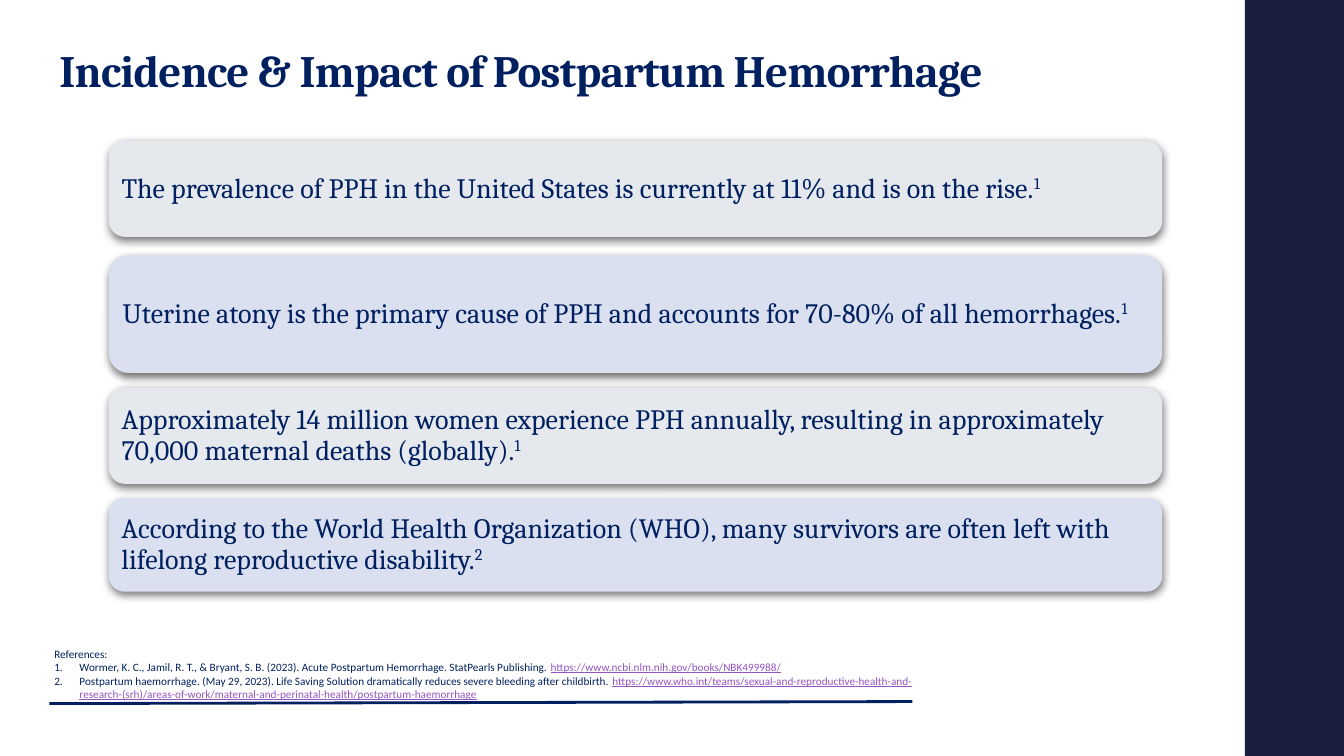
from dataclasses import dataclass
from itertools import cycle
from lxml import etree
from pptx import Presentation, util as u
from pptx.dml.color import RGBColor
from pptx.enum import shapes, text
from pptx.oxml.ns import qn

CELL = u.Inches(0.1)
COLUMNS, ROWS = 133.33, 75


@dataclass(frozen=True)
class Theme:
    """Colours, fonts and type sizes of the slide."""
    navy: str = "002060"
    band: str = "1B1E3E"
    link: str = "9454C3"
    cards: tuple = ("E5E9EE", "DAE0EF")
    serif: str = "Cambria"
    sans: str = "Calibri"
    title: int = 32
    body: int = 20
    note: int = 8


THEME = Theme()
TITLE = "Incidence & Impact of Postpartum Hemorrhage"
CARDS = [
    (0, 9.5, "The prevalence of PPH in the United States is currently at 11% and is on the rise.", "1"),
    (11.3, 11.7, "Uterine atony is the primary cause of PPH and accounts for 70-80% of all hemorrhages.", "1"),
    (24.5, 9.5, "Approximately 14 million women experience PPH annually, resulting in approximately "
     "70,000 maternal deaths (globally).", "1"),
    (35.4, 9.3, "According to the World Health Organization (WHO), many survivors are often left with "
     "lifelong reproductive disability.", "2"),
]
REFERENCES = [
    ("Wormer, K. C., Jamil, R. T., & Bryant, S. B. (2023). Acute Postpartum Hemorrhage. "
     "StatPearls Publishing. ", "https://www.ncbi.nlm.nih.gov/books/NBK499988/"),
    ("Postpartum haemorrhage. (May 29, 2023). Life Saving Solution dramatically reduces severe "
     "bleeding after childbirth. ",
     "https://www.who.int/teams/sexual-and-reproductive-health-and-research-(srh)/"
     "areas-of-work/maternal-and-perinatal-health/postpartum-haemorrhage"),
]


def cells(*lengths):
    """Turn grid lengths into slide lengths."""
    return [round(length * CELL) for length in lengths]


def add_run(para, words, font, size, colour=THEME.navy):
    """Append one styled run to a paragraph."""
    span = para.add_run()
    span.text = words
    span.font.name, span.font.size = font, u.Pt(size)
    span.font.color.rgb = RGBColor.from_string(colour)
    return span


def add_block(page, kind, box, colour):
    """Draw a filled shape without outline or shadow."""
    block = page.shapes.add_shape(kind, *cells(*box))
    block.shadow.inherit = False
    block.fill.solid()
    block.fill.fore_color.rgb = RGBColor.from_string(colour)
    block.line.fill.background()
    return block


def add_shadow(block):
    """Cast a soft shadow straight down."""
    effects = block._element.spPr.find(qn("a:effectLst"))
    shadow = etree.SubElement(effects, qn("a:outerShdw"), blurRad=str(u.Pt(6)),
                              dist=str(u.Pt(2)), dir="5400000", rotWithShape="0")
    colour = etree.SubElement(shadow, qn("a:srgbClr"), val="000000")
    etree.SubElement(colour, qn("a:alpha"), val="55000")


def add_title(page, box):
    """Place the slide heading."""
    frame = page.shapes.add_textbox(*cells(*box)).text_frame
    frame.word_wrap = True
    frame.vertical_anchor = text.MSO_ANCHOR.MIDDLE
    para = frame.paragraphs[0]
    para.line_spacing = 0.9
    span = add_run(para, TITLE, THEME.serif, THEME.title)
    span.font.bold = True
    span.font._element.set("spc", "-50")


def add_cards(page, box):
    """Stack the fact cards in alternating tints."""
    left, top, width = box
    for (offset, height, fact, source), tint in zip(CARDS, cycle(THEME.cards)):
        card = add_block(page, shapes.MSO_SHAPE.ROUNDED_RECTANGLE,
                         (left, top + offset, width, height), tint)
        add_shadow(card)
        frame = card.text_frame
        frame.word_wrap = True
        frame.vertical_anchor = text.MSO_ANCHOR.MIDDLE
        frame.margin_left = frame.margin_right = u.Inches(0.08)
        frame.margin_top = frame.margin_bottom = u.Inches(0.08)
        para = frame.paragraphs[0]
        para.alignment = text.PP_ALIGN.LEFT
        para.line_spacing = 0.9
        add_run(para, fact, THEME.serif, THEME.body)
        mark = add_run(para, source, THEME.serif, THEME.body)
        mark.font._element.set("baseline", "30000")


def add_references(page, box):
    """List the numbered sources with their addresses."""
    frame = page.shapes.add_textbox(*cells(*box)).text_frame
    frame.word_wrap = True
    frame.auto_size = text.MSO_AUTO_SIZE.SHAPE_TO_FIT_TEXT
    add_run(frame.paragraphs[0], "References:", THEME.sans, THEME.note)
    for citation, address in REFERENCES:
        para = frame.add_paragraph()
        props = para._p.get_or_add_pPr()
        props.set("marL", str(u.Inches(0.25)))
        props.set("indent", str(-u.Inches(0.25)))
        etree.SubElement(props, qn("a:buFont"), typeface="+mj-lt")
        etree.SubElement(props, qn("a:buAutoNum"), type="arabicPeriod")
        add_run(para, citation, THEME.sans, THEME.note)
        add_run(para, address, THEME.sans, THEME.note, THEME.link).font.underline = True


def add_rule(page, ends):
    """Draw the line below the references."""
    rule = page.shapes.add_connector(shapes.MSO_CONNECTOR.STRAIGHT, *cells(*ends))
    rule.line.color.rgb = RGBColor.from_string(THEME.navy)
    rule.line.width = u.Pt(2)
    etree.SubElement(rule._element.spPr, qn("a:effectLst"))


def main():
    """Build and save the slide."""
    deck = Presentation()
    deck.slide_width, deck.slide_height = cells(COLUMNS, ROWS)
    page = deck.slides.add_slide(deck.slide_layouts[6])
    add_block(page, shapes.MSO_SHAPE.RECTANGLE, (123.5, 0, COLUMNS - 123.5, ROWS), THEME.band)
    add_rule(page, (4.9, 69.8, 90.5, 69.6))
    add_title(page, (4.9, 1.5, 111.5, 11.4))
    add_cards(page, (10.8, 14, 104.5))
    add_references(page, (4.4, 63.7, 89.5, 6.4))
    deck.save("out.pptx")


if __name__ == "__main__":
    main()
